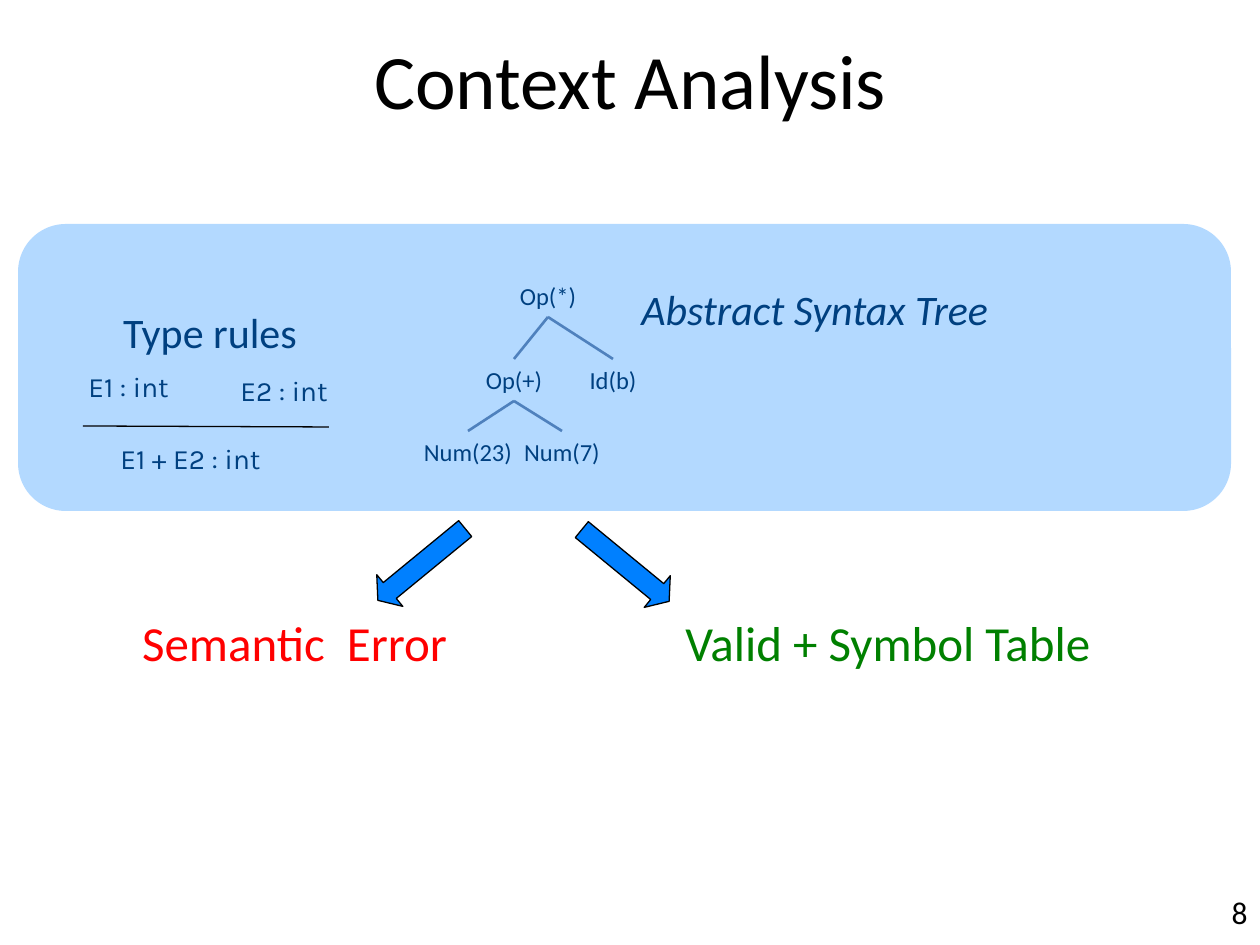
from lxml.etree import SubElement
from pptx import Presentation
from pptx.dml.color import RGBColor
from pptx.enum.shapes import MSO_CONNECTOR, MSO_SHAPE
from pptx.enum.text import MSO_ANCHOR, PP_ALIGN
from pptx.oxml.ns import qn
from pptx.util import Emu, Pt

BLACK = RGBColor(0, 0, 0)
NAVY = RGBColor(0x00, 0x40, 0x80)
PALE = RGBColor(0xB3, 0xD9, 0xFF)
BLUE = RGBColor(0x00, 0x80, 0xFF)
STEEL = RGBColor(0x4F, 0x81, 0xBD)
RED = RGBColor(0xFF, 0, 0)
GREEN = RGBColor(0, 0x80, 0)
LEFT, MID, RIGHT = PP_ALIGN.LEFT, PP_ALIGN.CENTER, PP_ALIGN.RIGHT

# Content: boxes are left, top, width, height in px
TITLE = "Context Analysis"
PANEL = (18, 224, 1213, 287)
LABELS = [  # text, box, size, colour, alignment, italic, wrap
    ("8", (998, 887, 262, 38), 18, BLACK, RIGHT, False, True),
    ("Abstract Syntax Tree", (629, 277, 391, 63), 24, NAVY, LEFT, True, False),
    ("Type rules", (32, 300, 356, 63), 24, NAVY, MID, False, True),
    ("Semantic  Error", (83, 606, 423, 72), 28, RED, MID, False, True),
    ("Valid + Symbol Table", (673, 606, 442, 72), 28, GREEN, LEFT, False, False),
]
NODES = {  # text: centre, top, width, parent
    "Op(*)": (548, 275, 82, None),
    "Op(+)": (514, 359, 82, "Op(*)"),
    "Id(b)": (613, 359, 73, "Op(*)"),
    "Num(23)": (468, 431, 115, "Op(+)"),
    "Num(7)": (562, 431, 102, "Op(+)"),
}
NODE_H = 42
RULE = [
    ("E1 : int", (76, 363, 116, 47)),
    ("E2 : int", (228, 367, 116, 47)),
    ("E1 + E2 : int", (108, 435, 185, 47)),
]
BAR = (83, 426, 329, 427)
ARROWS = [((401, 508, 41, 113), 50.6), ((605, 509, 41, 113), -50.6)]


def px(*nums):
    return [Emu(round(n * 914400 / 126)) for n in nums]


def style(para, size, color, align, font="Calibri", slant=False):
    para.alignment = align
    for run in para.runs:
        run.font.size = Pt(size)
        run.font.name = font
        run.font.italic = slant
        run.font.color.rgb = color


def label(home, text, box, size, color, align, slant=False, wrap=False,
          font="Calibri"):
    frame = home.add_textbox(*px(*box)).text_frame
    frame.word_wrap = wrap
    frame.text = text
    style(frame.paragraphs[0], size, color, align, font, slant)


def link(home, ends, color, width):
    line = home.add_connector(MSO_CONNECTOR.STRAIGHT, *px(*ends))
    line.line.color.rgb = color
    line.line.width = Pt(width)
    SubElement(line._element.spPr, qn("a:effectLst"))


def block(home, kind, box, color):
    shape = home.add_shape(kind, *px(*box))
    shape.shadow.inherit = False
    shape.fill.solid()
    shape.fill.fore_color.rgb = color
    shape.line.fill.background()
    return shape


def main():
    deck = Presentation()
    deck.slide_width, deck.slide_height = px(1260, 945)
    slide = deck.slides.add_slide(deck.slide_layouts[5])
    shapes = slide.shapes

    # Panel and title
    block(shapes, MSO_SHAPE.ROUNDED_RECTANGLE, PANEL, PALE)
    title = shapes.title
    title.left, title.top, title.width, title.height = px(95, 0, 1071, 158)
    title.text_frame.text = TITLE
    title.text_frame.vertical_anchor = MSO_ANCHOR.MIDDLE
    style(title.text_frame.paragraphs[0], 44, BLACK, MID)

    # Syntax tree: each edge runs from the parent's foot to the child's top
    tree = shapes.add_group_shape().shapes
    for text, (mid, top, width, parent) in NODES.items():
        label(tree, text, (mid - width / 2, top, width, NODE_H), 14, NAVY, MID)
        if parent:
            x, y = NODES[parent][:2]
            link(tree, (x, y + NODE_H, mid, top), STEEL, 1.5)

    # Type rule
    rule = shapes.add_group_shape().shapes
    link(rule, BAR, BLACK, 0.75)
    for text, box in RULE:
        label(rule, text, box, 16, NAVY, LEFT, font="Karla")

    # Labels and outcome arrows
    for item in LABELS:
        label(shapes, *item)
    for box, turn in ARROWS:
        arrow = block(shapes, MSO_SHAPE.DOWN_ARROW, box, BLUE)
        arrow.rotation = turn
        arrow.adjustments[0], arrow.adjustments[1] = 0.5, 0.375
        arrow.line.color.rgb = BLACK
        arrow.line.width = Pt(0.75)

    deck.save("out.pptx")


if __name__ == "__main__":
    main()
